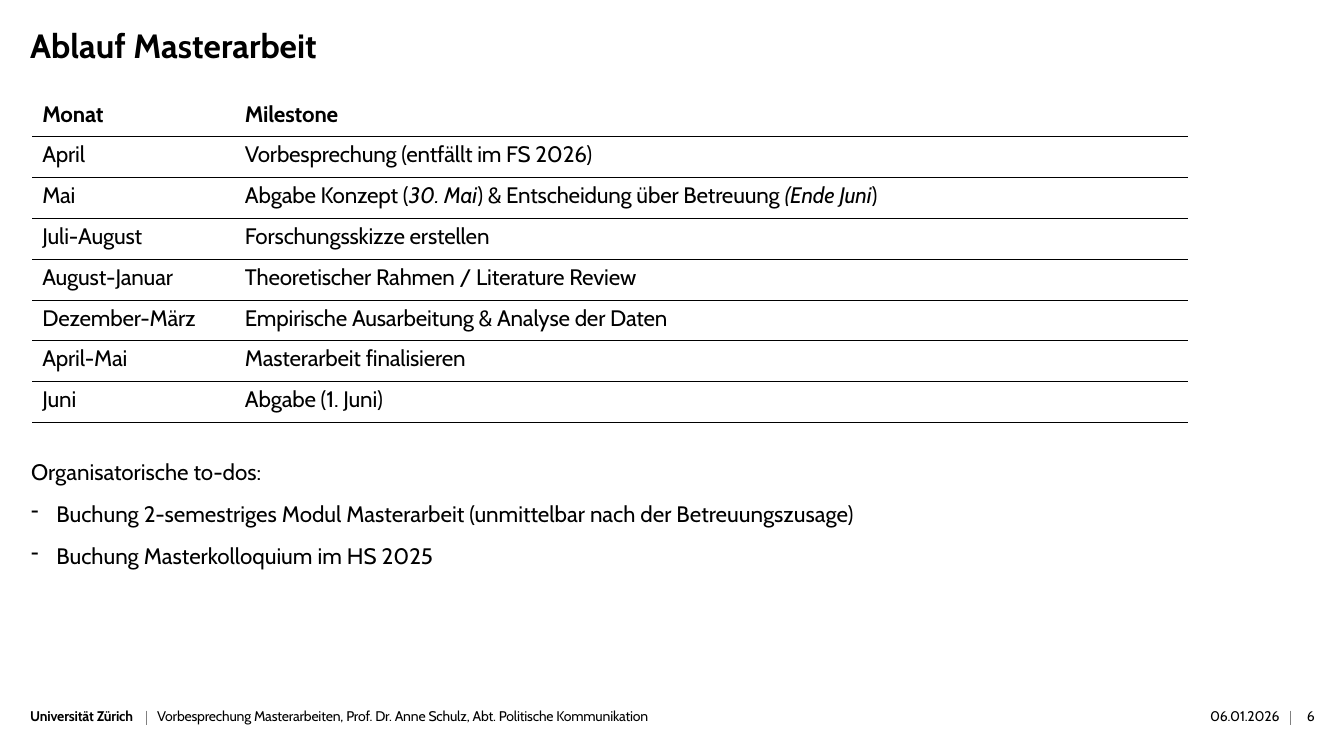
from lxml.etree import SubElement
from pptx import Presentation
from pptx.dml.color import RGBColor
from pptx.enum.shapes import MSO_CONNECTOR
from pptx.enum.text import MSO_ANCHOR, PP_ALIGN
from pptx.oxml.ns import qn
from pptx.util import Inches, Pt

MILESTONES = [
    ("Monat", ["Milestone"]),
    ("April", ["Vorbesprechung (entfällt im FS 2026)"]),
    # Every second run is italic.
    ("Mai", ["Abgabe Konzept (", "30. Mai", ") & Entscheidung über Betreuung ",
             "(Ende Juni", ")"]),
    ("Juli-August", ["Forschungsskizze erstellen"]),
    ("August-Januar", ["Theoretischer Rahmen / Literature Review"]),
    ("Dezember-März", ["Empirische Ausarbeitung & Analyse der Daten"]),
    ("April-Mai", ["Masterarbeit finalisieren"]),
    ("Juni", ["Abgabe (1. Juni)"]),
]
TODOS = [
    "Buchung 2-semestriges Modul Masterarbeit (unmittelbar nach der Betreuungszusage)",
    "Buchung Masterkolloquium im HS 2025",
]


def color(value):
    return RGBColor.from_string(value)


class SlideBuilder:
    font_name = "Cabin"
    black = "000000"
    gray = "808080"
    tight = -10  # letter spacing in hundredths of a point

    def __init__(self, slide):
        self.slide = slide

    def run(self, paragraph, text, size, bold=False, italic=False, spacing=None):
        run = paragraph.add_run()
        run.text = text
        font = run.font
        font.name, font.size = self.font_name, Pt(size)
        font.bold, font.italic = bold, italic
        font.color.rgb = color(self.black)
        if spacing is not None:
            run._r.get_or_add_rPr().set("spc", str(spacing))

    def frame(self, left, top, width, height):
        """Add an empty text box without margins and return its text frame."""
        box = self.slide.shapes.add_textbox(
            Inches(left), Inches(top), Inches(width), Inches(height))
        frame = box.text_frame
        frame.word_wrap = True
        frame.vertical_anchor = MSO_ANCHOR.TOP
        frame.margin_left = frame.margin_right = 0
        frame.margin_top = frame.margin_bottom = 0
        return frame

    def text(self, left, top, width, height, text, size=10, bold=False,
             align=PP_ALIGN.LEFT, line_spacing=0.98, spacing=None):
        paragraph = self.frame(left, top, width, height).paragraphs[0]
        paragraph.alignment = align
        paragraph.line_spacing = line_spacing
        self.run(paragraph, text, size, bold, spacing=spacing)

    def divider(self, left):
        line = self.slide.shapes.add_connector(
            MSO_CONNECTOR.STRAIGHT, Inches(left), Inches(7.05),
            Inches(left), Inches(7.19))
        line.line.color.rgb = color(self.gray)
        line.line.width = Pt(0.5)
        SubElement(line._element.spPr, qn("a:effectLst"))

    def border(self, cell, side, points):
        """Draw one cell border; zero points hides it."""
        line = SubElement(cell._tc.get_or_add_tcPr(), qn(f"a:ln{side}"))
        line.set("w", str(Pt(points)))
        if points:
            fill = SubElement(line, qn("a:solidFill"))
            SubElement(fill, qn("a:srgbClr")).set("val", self.black)
        else:
            SubElement(line, qn("a:noFill"))

    def cell(self, cell, texts, row):
        paragraph = cell.text_frame.paragraphs[0]
        paragraph.line_spacing = 0.98
        for index, text in enumerate(texts):
            self.run(paragraph, text, 16, bold=row == 0,
                     italic=index % 2 == 1, spacing=self.tight)
        top = {0: 0, 1: 1}.get(row, 0.33)
        bottom = 1 if row == 0 else 0.33
        for side, points in (("L", 0), ("R", 0), ("T", top), ("B", bottom)):
            self.border(cell, side, points)
        cell.fill.background()

    def table(self, left, top, widths, row_height, rows):
        table = self.slide.shapes.add_table(
            len(rows), len(widths), Inches(left), Inches(top),
            Inches(sum(widths)), Inches(row_height * len(rows))).table
        table.first_row = table.horz_banding = False
        for column, width in zip(table.columns, widths):
            column.width = Inches(width)
        for row, (month, milestone) in enumerate(rows):
            self.cell(table.cell(row, 0), [month], row)
            self.cell(table.cell(row, 1), milestone, row)

    def dash_list(self, left, top, width, height, heading, items):
        frame = self.frame(left, top, width, height)
        for index, text in enumerate([heading, *items]):
            paragraph = frame.add_paragraph() if index else frame.paragraphs[0]
            paragraph.line_spacing = 1.03
            if index:
                paragraph.space_before = Pt(10)
                properties = paragraph._p.get_or_add_pPr()
                properties.set("marL", str(Inches(0.25)))
                properties.set("indent", str(Inches(-0.25)))
                SubElement(properties, qn("a:buChar")).set("char", "-")
            self.run(paragraph, text, 16)


def main():
    presentation = Presentation()
    presentation.slide_width = Inches(13.33)
    presentation.slide_height = Inches(7.5)
    builder = SlideBuilder(presentation.slides.add_slide(presentation.slide_layouts[6]))

    builder.text(0.3, 0.27, 12.74, 0.68, "Ablauf Masterarbeit",
                 size=24, bold=True, line_spacing=0.97)
    builder.table(0.32, 0.95, [2.01, 9.45], 0.405, MILESTONES)
    builder.dash_list(0.31, 4.54, 11.46, 2.27, "Organisatorische to-dos:", TODOS)

    tight = builder.tight
    builder.text(0.3, 7.03, 1.1, 0.17, "Universität Zürich", bold=True, spacing=tight)
    builder.text(1.56, 7.03, 8.66, 0.16,
                 "Vorbesprechung Masterarbeiten, Prof. Dr. Anne Schulz, "
                 "Abt. Politische Kommunikation", spacing=tight)
    builder.text(11.39, 7.03, 1.3, 0.16, "06.01.2026",
                 align=PP_ALIGN.RIGHT, spacing=tight)
    builder.text(12.81, 7.03, 0.23, 0.16, "6", align=PP_ALIGN.RIGHT, spacing=tight)
    for left in (1.45, 12.8):
        builder.divider(left)

    presentation.save("out.pptx")


if __name__ == "__main__":
    main()
